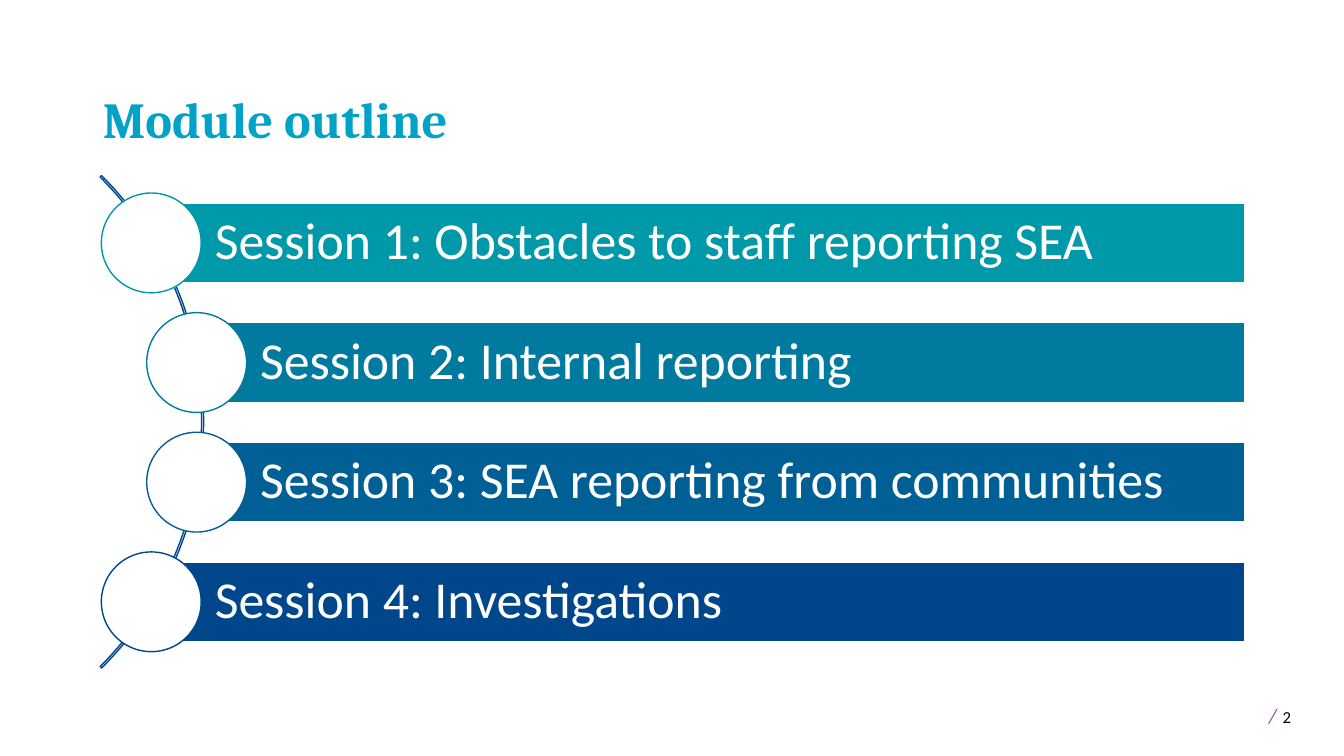
from dataclasses import dataclass

from pptx import Presentation
from pptx.dml.color import RGBColor
from pptx.enum.shapes import MSO_SHAPE
from pptx.enum.text import MSO_ANCHOR, MSO_AUTO_SIZE, PP_ALIGN
from pptx.util import Inches, Pt

ARC, BAR, DISC = MSO_SHAPE.BLOCK_ARC, MSO_SHAPE.RECTANGLE, MSO_SHAPE.OVAL
TOP, MIDDLE, BOTTOM = MSO_ANCHOR.TOP, MSO_ANCHOR.MIDDLE, MSO_ANCHOR.BOTTOM
LEFT = PP_ALIGN.LEFT
NO_FIT = MSO_AUTO_SIZE.NONE


@dataclass(frozen=True)
class Theme:
    head: str = "Cambria"
    body: str = "Calibri"
    title: str = "00A2C7"
    white: str = "FFFFFF"
    black: str = "000000"
    slash: str = "9053A1"
    arc: str = "00468B"
    title_size: int = 36
    bar_size: int = 37
    space_size: int = 18
    slash_size: int = 15
    page_size: int = 12


class Deck:
    def __init__(self, theme):
        self.theme = theme
        self.file = Presentation()
        self.file.slide_width = Inches(13.33)
        self.file.slide_height = Inches(7.5)
        self.slide = self.file.slides.add_slide(self.file.slide_layouts[5])

    def fill_text(self, frame, runs, anchor, font, spacing=1.0):
        """Each run is (text, size, colour, bold, italic)."""
        frame.word_wrap = True
        frame.auto_size = NO_FIT
        frame.vertical_anchor = anchor
        para = frame.paragraphs[0]
        para.alignment = LEFT
        para.line_spacing = spacing
        for text, size, color, bold, italic in runs:
            run = para.add_run()
            run.text = text
            run.font.name = font
            run.font.size = Pt(size)
            run.font.color.rgb = RGBColor.from_string(color)
            run.font.bold = bold
            run.font.italic = italic

    def title(self, text, *box):
        holder = self.slide.shapes.title
        holder.left, holder.top, holder.width, holder.height = map(Inches, box)
        runs = [(text, self.theme.title_size, self.theme.title, True, False)]
        self.fill_text(holder.text_frame, runs, BOTTOM, self.theme.head, 0.9)

    def text(self, runs, *box):
        holder = self.slide.shapes.add_textbox(*map(Inches, box))
        self.fill_text(holder.text_frame, runs, TOP, self.theme.body)

    def shape(self, kind, fill, line, *box):
        shape = self.slide.shapes.add_shape(kind, *map(Inches, box))
        shape.shadow.inherit = False
        if fill:
            shape.fill.solid()
            shape.fill.fore_color.rgb = RGBColor.from_string(fill)
        else:
            shape.fill.background()
        shape.line.color.rgb = RGBColor.from_string(line)
        shape.line.width = Pt(1)
        return shape

    def arc(self, start, end, thick, *box):
        arc = self.shape(ARC, None, self.theme.arc, *box)
        for index, value in enumerate((start, end, thick)):
            arc.adjustments[index] = value

    def bar(self, text, color, *box):
        theme = self.theme
        frame = self.shape(BAR, color, theme.white, *box).text_frame
        frame.margin_left = Inches(0.63)
        frame.margin_right = frame.margin_top = frame.margin_bottom = Inches(0.1)
        runs = [(text, theme.bar_size, theme.white, False, False)]
        self.fill_text(frame, runs, MIDDLE, theme.body, 0.9)

    def disc(self, color, *box):
        self.shape(DISC, self.theme.white, color, *box)


def main():
    theme = Theme()
    deck = Deck(theme)

    # Title
    deck.title("Module outline", 0.92, 0.4, 11.5, 1.13)

    # Curve behind the sessions
    deck.arc(189, 27, 0.003, -4.89, 0.73, 6.91, 6.91)

    # Sessions: bars share a right edge, discs sit on their left ends
    sessions = [
        ("Session 1: Obstacles to staff reporting SEA", "0099A9", 1.5),
        ("Session 2: Internal reporting", "007B9F", 1.95),
        ("Session 3: SEA reporting from communities", "005F95", 1.95),
        ("Session 4: Investigations", "00468B", 1.5),
    ]
    right, first, last, high, disc = 12.35, 2.41, 5.97, 0.79, 0.99
    pitch = (last - first) / (len(sessions) - 1)
    for row, (text, color, left) in enumerate(sessions):
        mid = first + row * pitch
        deck.bar(text, color, left, mid - high / 2, right - left, high)
        deck.disc(color, left - disc / 2, mid - disc / 2, disc, disc)

    # Page number
    space = (" ", theme.space_size, theme.black, False, False)
    slash = ("/", theme.slash_size, theme.slash, False, True)
    page = ("2", theme.page_size, theme.black, False, False)
    deck.text([space, slash, space, page], 12.43, 6.88, 0.87, 0.4)

    deck.file.save("out.pptx")


if __name__ == "__main__":
    main()
